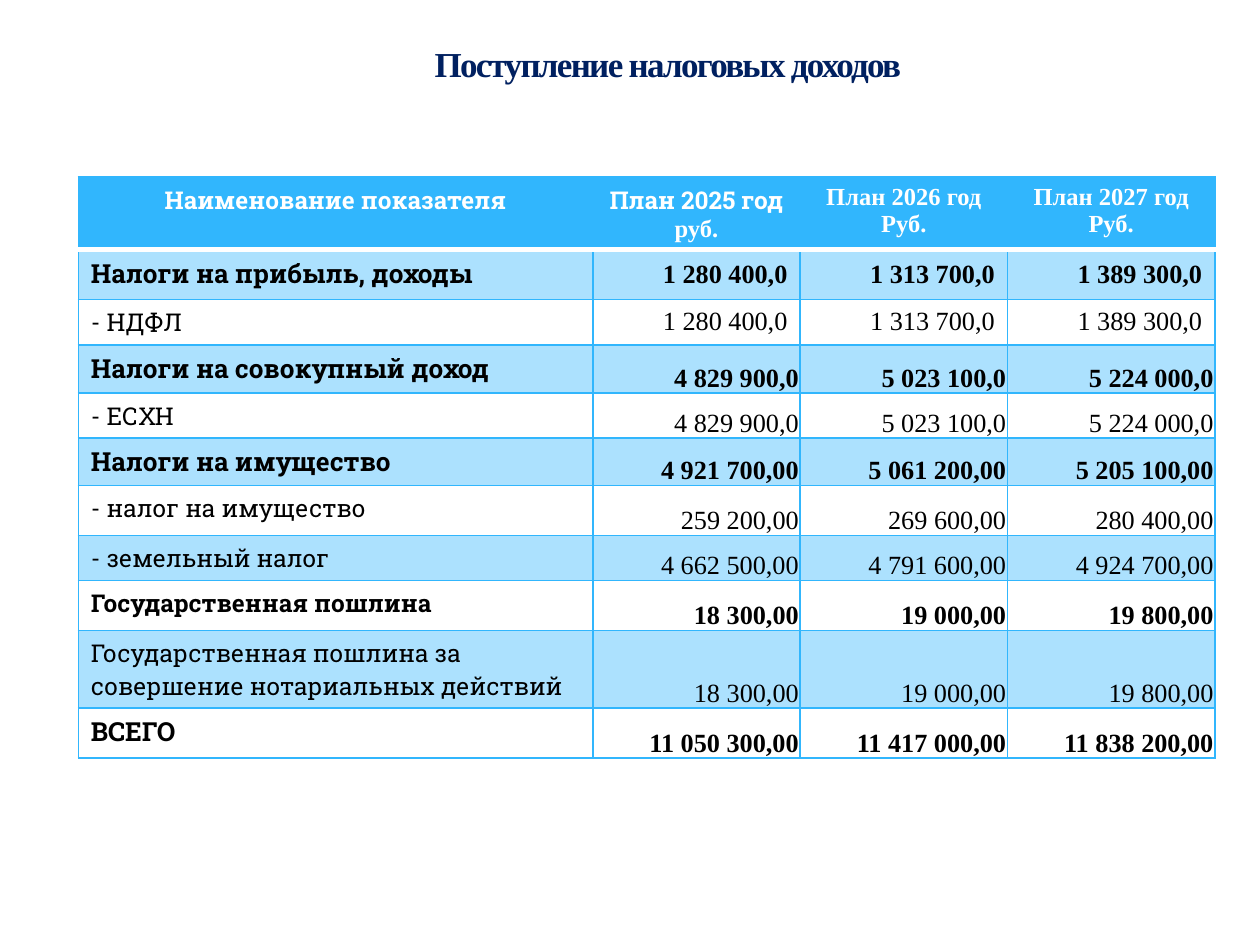
from lxml.etree import SubElement
from pptx import Presentation
from pptx.dml.color import RGBColor
from pptx.enum.text import MSO_ANCHOR as Anchor, PP_ALIGN as Align
from pptx.oxml.ns import qn
from pptx.util import Pt

SERIF, SLAB = "Times New Roman", "Roboto Slab"
BLUE, WHITE, BLACK, NAVY = "31B6FD", "FFFFFF", "000000", "002060"
BAND_OPACITY = 40

COLUMN_WIDTHS = [294, 118.5, 118.5, 118.5]
ROW_HEIGHTS = [40, 28.5, 26, 27.5, 24, 24.5, 28.5, 24.5, 28.5, 40, 28.5]

# Each header cell is a list of (line, font) pairs.
HEADERS = [
    [("Наименование показателя", SLAB)],
    [("План 2025 год", SLAB), ("руб.", SERIF)],
    [("План 2026 год", SERIF), ("Руб.", SERIF)],
    [("План 2027 год", SERIF), ("Руб.", SERIF)],
]

# Label, label size, bold, values for the three years
ROWS = [
    ("Налоги на прибыль, доходы", 15, True, ["1 280 400,0", "1 313 700,0", "1 389 300,0"]),
    ("- НДФЛ", 14, False, ["1 280 400,0", "1 313 700,0", "1 389 300,0"]),
    ("Налоги на совокупный доход", 15, True, ["4 829 900,0", "5 023 100,0", "5 224 000,0"]),
    ("- ЕСХН", 14, False, ["4 829 900,0", "5 023 100,0", "5 224 000,0"]),
    ("Налоги на имущество", 15, True, ["4 921 700,00", "5 061 200,00", "5 205 100,00"]),
    ("- налог на имущество", 14, False, ["259 200,00", "269 600,00", "280 400,00"]),
    ("- земельный налог", 14, False, ["4 662 500,00", "4 791 600,00", "4 924 700,00"]),
    ("Государственная пошлина", 14, True, ["18 300,00", "19 000,00", "19 800,00"]),
    ("Государственная пошлина за совершение нотариальных действий", 14, False,
     ["18 300,00", "19 000,00", "19 800,00"]),
    ("ВСЕГО", 15, True, ["11 050 300,00", "11 417 000,00", "11 838 200,00"]),
]
MIDDLE_ROWS = 2
TIGHT_MARGINS = {"margin_left": Pt(0.75), "margin_right": Pt(0.75),
                 "margin_top": Pt(0.75), "margin_bottom": Pt(0)}


def color(value):
    return RGBColor.from_string(value)


def set_attributes(target, values):
    for name, value in values.items():
        setattr(target, name, value)


def write_line(paragraph, text, font, size, fill, bold, align):
    paragraph.alignment = align
    run = paragraph.add_run()
    run.text = text
    set_attributes(run.font, {"name": font, "size": Pt(size), "bold": bold})
    run.font.color.rgb = color(fill)
    return run


def write_cell(cell, lines, size, fill, bold, align):
    frame = cell.text_frame
    for index, (text, font) in enumerate(lines):
        paragraph = frame.add_paragraph() if index else frame.paragraphs[0]
        write_line(paragraph, text, font, size, fill, bold, align)


def set_border(cell, side, line_color, width):
    line = SubElement(cell._tc.get_or_add_tcPr(), qn(f"a:ln{side}"), w=str(Pt(width)))
    solid = SubElement(line, qn("a:solidFill"))
    SubElement(solid, qn("a:srgbClr"), val=line_color)


def style_cell(cell, row):
    """Draw the borders, then the header, band or empty fill."""
    for side in "LRTB":
        under_header = (row, side) in [(0, "B"), (1, "T")]
        set_border(cell, side, *((WHITE, 3) if under_header else (BLUE, 1)))
    if row and row % 2 == 0:
        cell.fill.background()
        return
    cell.fill.solid()
    cell.fill.fore_color.rgb = color(BLUE)
    if row:
        shade = cell._tc.tcPr.find(f"{qn('a:solidFill')}/{qn('a:srgbClr')}")
        SubElement(shade, qn("a:alpha"), val=str(BAND_OPACITY * 1000))


def add_title(slide, left, top, width, height):
    box = slide.shapes.add_textbox(Pt(left), Pt(top), Pt(width), Pt(height))
    set_attributes(box.text_frame, {"word_wrap": True, "vertical_anchor": Anchor.MIDDLE})
    run = write_line(box.text_frame.paragraphs[0], "Поступление налоговых доходов",
                     SERIF, 20, NAVY, True, Align.CENTER)
    run.font._element.set("spc", "-100")


def add_revenue_table(slide, left, top):
    table = slide.shapes.add_table(
        len(ROW_HEIGHTS), len(COLUMN_WIDTHS), Pt(left), Pt(top),
        Pt(sum(COLUMN_WIDTHS)), Pt(sum(ROW_HEIGHTS))).table
    set_attributes(table, {"first_row": False, "horz_banding": False})
    for column, width in zip(table.columns, COLUMN_WIDTHS):
        column.width = Pt(width)
    for index, (row, height) in enumerate(zip(table.rows, ROW_HEIGHTS)):
        row.height = Pt(height)
        for cell in row.cells:
            style_cell(cell, index)

    for column, lines in enumerate(HEADERS):
        write_cell(table.cell(0, column), lines, 14, WHITE, True, Align.CENTER)
    for row, (label, size, bold, values) in enumerate(ROWS, 1):
        write_cell(table.cell(row, 0), [(label, SLAB)], size, BLACK, bold, Align.LEFT)
        for column, value in enumerate(values, 1):
            cell = table.cell(row, column)
            write_cell(cell, [(value, SERIF)], 15, BLACK, bold, Align.RIGHT)
            if row <= MIDDLE_ROWS:
                cell.vertical_anchor = Anchor.MIDDLE
            else:
                set_attributes(cell, {"vertical_anchor": Anchor.BOTTOM, **TIGHT_MARGINS})


def main():
    presentation = Presentation()
    set_attributes(presentation, {"slide_width": Pt(720), "slide_height": Pt(540)})
    slide = presentation.slides.add_slide(presentation.slide_layouts[6])
    add_revenue_table(slide, 44.75, 101.25)
    add_title(slide, 118, 16.5, 527, 39.5)
    presentation.save("out.pptx")


if __name__ == "__main__":
    main()
